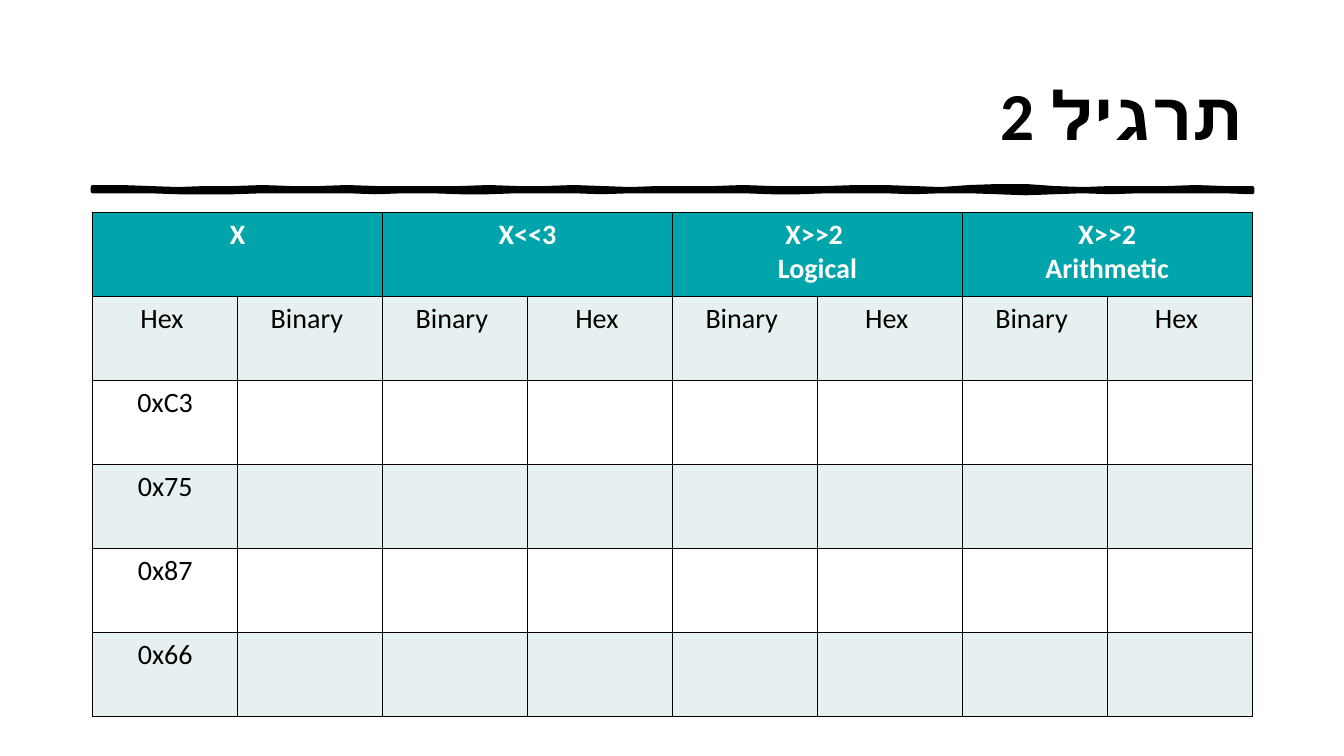
from lxml import etree
from pptx import Presentation
from pptx import util as u
from pptx.dml.color import RGBColor
from pptx.enum import text
from pptx.oxml import ns

BLACK = RGBColor(0x00, 0x00, 0x00)
WHITE = RGBColor(0xFF, 0xFF, 0xFF)
TEAL = RGBColor(0x00, 0xA5, 0xAB)
PALE = RGBColor(0xE7, 0xF0, 0xF1)
FONT = "Calibri"

WIDTH, HEIGHT = 13.33, 7.5
MARGIN = 0.92
COLS, ROWS = 8, 9
COL_W = 11.5 / COLS
ROW_H = HEIGHT / ROWS

# Hand-drawn rule: edge offsets in hundredths of an inch, evenly spaced
UPPER = [-1, -1, 0, 1, 0, 0, -1, 0, 0, -1, 0, 0, 0, 0, -1, 0,
         0, -1, 0, 1, 0, 0, 0, -1, 0, 0, 0, -1, -1, 0, 1, -1,
         -2, -2, 0, 1, 0, 0, 0, -1, 0, 0]
LOWER = [0, 0, 0, 1, 1, 1, 0, 0, 0, 0, 1, 0, 0, 1, 1, 0,
         0, 0, 1, 0, 0, 0, 0, 0, 1, 1, 0, 0, 0, 1, 0, 0,
         1, 2, 1, 0, 1, 0, 0, 0, 0, 1]

HEADS = ["X", "X<<3", "X>>2 \nLogical", "X>>2\nArithmetic"]
SUBHEADS = ["Hex ", "Binary "] + ["Binary ", "Hex "] * 3
VALUES = ["0xC3", "0x75", "0x87", "0x66"]


def write(tf, content, size=20, color=BLACK, bold=False,
          align=text.PP_ALIGN.CENTER, rtl=False):
    for i, line in enumerate(content.split("\n")):
        p = tf.paragraphs[0] if i == 0 else tf.add_paragraph()
        p.alignment = align
        if rtl:
            p._p.get_or_add_pPr().set("rtl", "1")
        r = p.add_run()
        r.text = line
        r.font.name, r.font.size, r.font.bold = FONT, u.Pt(size), bold
        r.font.color.rgb = color
        etree.SubElement(r._r.get_or_add_rPr(), ns.qn("a:cs"), typeface=FONT)


class Deck:
    def __init__(self):
        self.prs = Presentation()
        self.prs.slide_width = u.Inches(WIDTH)
        self.prs.slide_height = u.Inches(HEIGHT)
        self.s = self.prs.slides.add_slide(self.prs.slide_layouts[5])

    def box(self, col, row, cols, rows):
        return (u.Inches(MARGIN + col * COL_W), u.Inches(row * ROW_H),
                u.Inches(cols * COL_W), u.Inches(rows * ROW_H))

    def title(self, content, row, rows):
        sp = self.s.shapes.title
        sp.left, sp.top, sp.width, sp.height = self.box(0, row, COLS, rows)
        sp.text_frame.vertical_anchor = text.MSO_ANCHOR.MIDDLE
        write(sp.text_frame, content, size=48, bold=True,
              align=text.PP_ALIGN.RIGHT, rtl=True)

    def rough_rule(self, row, thickness=0.03):
        left, top, width, _ = self.box(0, row, COLS, 0)
        step = width / (len(UPPER) - 1)
        upper = [(left + i * step, top + u.Inches(d / 100))
                 for i, d in enumerate(UPPER)]
        lower = [(left + i * step, top + u.Inches(thickness + d / 100))
                 for i, d in enumerate(LOWER)]
        outline = upper + lower[::-1]
        builder = self.s.shapes.build_freeform(*outline[0])
        builder.add_line_segments(outline[1:], close=True)
        sp = builder.convert_to_shape()
        sp.shadow.inherit = False
        sp.fill.solid()
        sp.fill.fore_color.rgb = BLACK
        sp.line.color.rgb = BLACK
        sp.line.width = u.Pt(3)

    def table(self, row, rows):
        frame = self.s.shapes.add_table(rows, COLS, *self.box(0, row, COLS, rows))
        tbl = frame.table
        for r in range(rows):
            for c in range(COLS):
                fill = TEAL if r == 0 else PALE if r % 2 else WHITE
                self.style_cell(tbl.cell(r, c), fill)
        return tbl

    def style_cell(self, cell, fill):
        tcPr = cell._tc.get_or_add_tcPr()
        for side in ("a:lnL", "a:lnR", "a:lnT", "a:lnB"):
            ln = etree.SubElement(tcPr, ns.qn(side), w=str(u.Pt(1)))
            solid = etree.SubElement(ln, ns.qn("a:solidFill"))
            etree.SubElement(solid, ns.qn("a:srgbClr"), val=str(BLACK))
        cell.fill.solid()
        cell.fill.fore_color.rgb = fill


def main():
    deck = Deck()

    # Heading and its rule
    deck.rough_rule(row=2.24)
    deck.title("תרגיל 2", row=0.48, rows=1.74)

    # Shift exercise table
    tbl = deck.table(row=2.53, rows=2 + len(VALUES))
    for i, head in enumerate(HEADS):
        cell = tbl.cell(0, 2 * i)
        cell.merge(tbl.cell(0, 2 * i + 1))
        write(cell.text_frame, head, color=WHITE, bold=True, rtl=i == 0)
    for c, subhead in enumerate(SUBHEADS):
        write(tbl.cell(1, c).text_frame, subhead)
    for r, value in enumerate(VALUES, start=2):
        write(tbl.cell(r, 0).text_frame, value)

    deck.prs.save("out.pptx")


if __name__ == "__main__":
    main()
